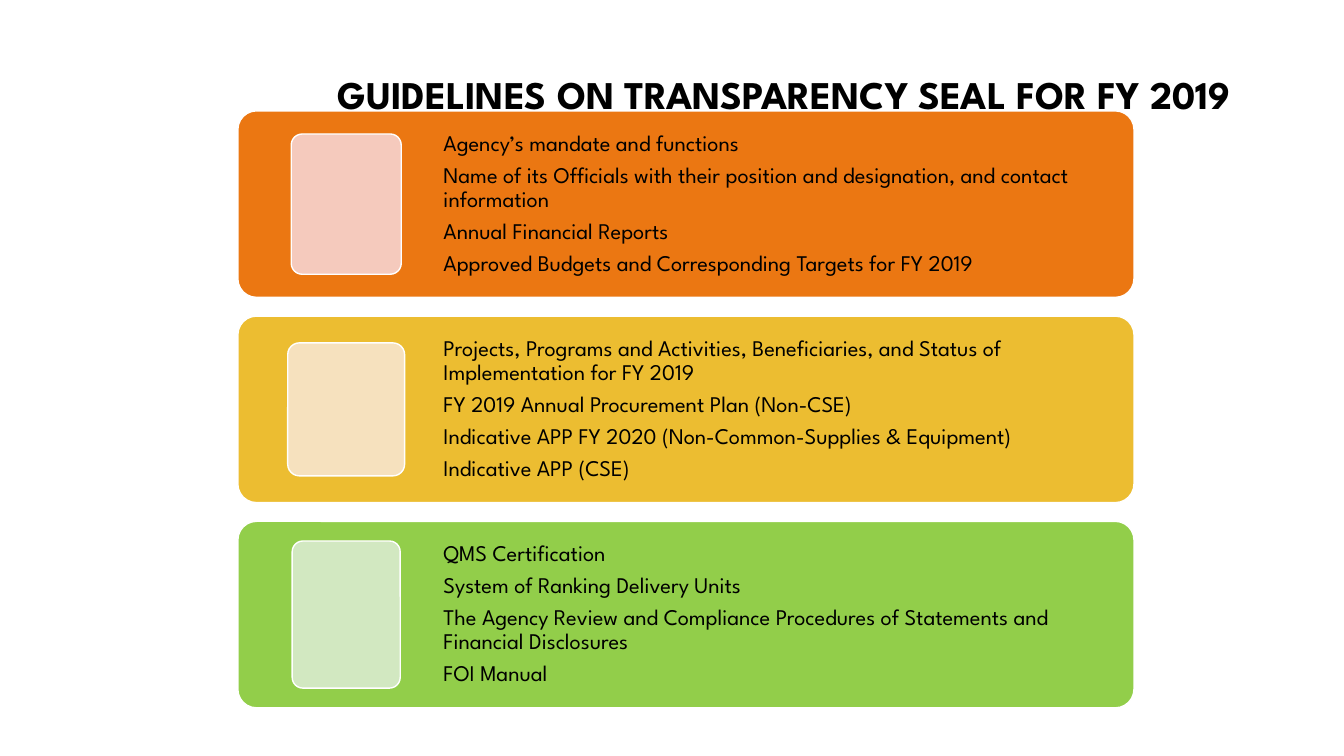
from dataclasses import dataclass

from pptx import Presentation
from pptx import util as u
from pptx.dml.color import RGBColor
from pptx.enum import shapes, text

FONT = "League Spartan"
BLACK, WHITE = "000000", "FFFFFF"

# Panel grid, in points
PANEL_LEFT, PANEL_TOP = 169.9, 79.2
PANEL_WIDTH, PANEL_HEIGHT = 640.1, 133.2
PANEL_PITCH = 146.6
TILE_CENTER = 247.3
TEXT_LEFT, TEXT_WIDTH = 311.6, 498.6


@dataclass
class Panel:
    fill: str
    tile_fill: str
    tile_width: float
    tile_height: float
    items: list[str]


PANELS = [
    Panel("EB7712", "F5CABD", 78.6, 100.2, [
        "Agency’s mandate and functions",
        "Name of its Officials with their position and designation, and contact information",
        "Annual Financial Reports",
        "Approved Budgets and Corresponding Targets for FY 2019",
    ]),
    Panel("ECBD31", "F6E1BE", 83.5, 95, [
        "Projects, Programs and Activities, Beneficiaries, and Status of Implementation for FY 2019",
        "FY 2019 Annual Procurement Plan (Non-CSE)",
        "Indicative APP FY 2020 (Non-Common-Supplies & Equipment)",
        "Indicative APP (CSE)",
    ]),
    Panel("92CE4A", "D2E8C1", 77.2, 105.1, [
        "QMS Certification",
        "System of Ranking Delivery Units",
        "The Agency Review and Compliance Procedures of Statements and Financial Disclosures",
        "FOI Manual",
    ]),
]


def color(value: str) -> RGBColor:
    return RGBColor.from_string(value)


def add_card(page, left: float, top: float, width: float, height: float, fill: str) -> None:
    card = page.shapes.add_shape(shapes.MSO_SHAPE.ROUNDED_RECTANGLE,
                                 u.Pt(left), u.Pt(top), u.Pt(width), u.Pt(height))
    card.adjustments[0] = 0.1
    card.shadow.inherit = False
    card.fill.solid()
    card.fill.fore_color.rgb = color(fill)
    card.line.color.rgb = color(WHITE)
    card.line.width = u.Pt(1)


def add_text(page, lines: list[str], left: float, top: float, width: float, height: float, *,
             size: float, bold: bool = False, wrap: bool = True,
             anchor=text.MSO_ANCHOR.TOP, inset_x: float = 7.2, inset_y: float = 3.6,
             line_spacing: float = 1.0, space_after: float = 0) -> None:
    box = page.shapes.add_textbox(u.Pt(left), u.Pt(top), u.Pt(width), u.Pt(height))
    frame = box.text_frame
    frame.word_wrap = wrap
    frame.vertical_anchor = anchor
    frame.margin_left = frame.margin_right = u.Pt(inset_x)
    frame.margin_top = frame.margin_bottom = u.Pt(inset_y)
    for index, line in enumerate(lines):
        para = frame.paragraphs[0] if index == 0 else frame.add_paragraph()
        para.line_spacing = line_spacing
        para.space_after = u.Pt(space_after)
        span = para.add_run()
        span.text = line
        span.font.name = FONT
        span.font.size = u.Pt(size)
        span.font.bold = bold
        span.font.color.rgb = color(BLACK)


def add_panel(page, panel: Panel, top: float) -> None:
    add_card(page, PANEL_LEFT, top, PANEL_WIDTH, PANEL_HEIGHT, panel.fill)
    add_text(page, panel.items, TEXT_LEFT, top, TEXT_WIDTH, PANEL_HEIGHT, size=16,
             anchor=text.MSO_ANCHOR.MIDDLE, inset_x=5.2, inset_y=5.2,
             line_spacing=0.9, space_after=5.6)
    # The tile is centred on the panel's height
    add_card(page, TILE_CENTER - panel.tile_width / 2,
             top + (PANEL_HEIGHT - panel.tile_height) / 2,
             panel.tile_width, panel.tile_height, panel.tile_fill)


def main() -> None:
    deck = Presentation()
    deck.slide_width, deck.slide_height = u.Pt(960), u.Pt(540)
    page = deck.slides.add_slide(deck.slide_layouts[6])

    # Panels
    for row, panel in enumerate(PANELS):
        add_panel(page, panel, PANEL_TOP + row * PANEL_PITCH)

    # Title
    add_text(page, ["GUIDELINES ON TRANSPARENCY SEAL FOR FY 2019"],
             234, 46.8, 685.4, 41, size=28, bold=True, wrap=False)

    deck.save("out.pptx")


if __name__ == "__main__":
    main()
